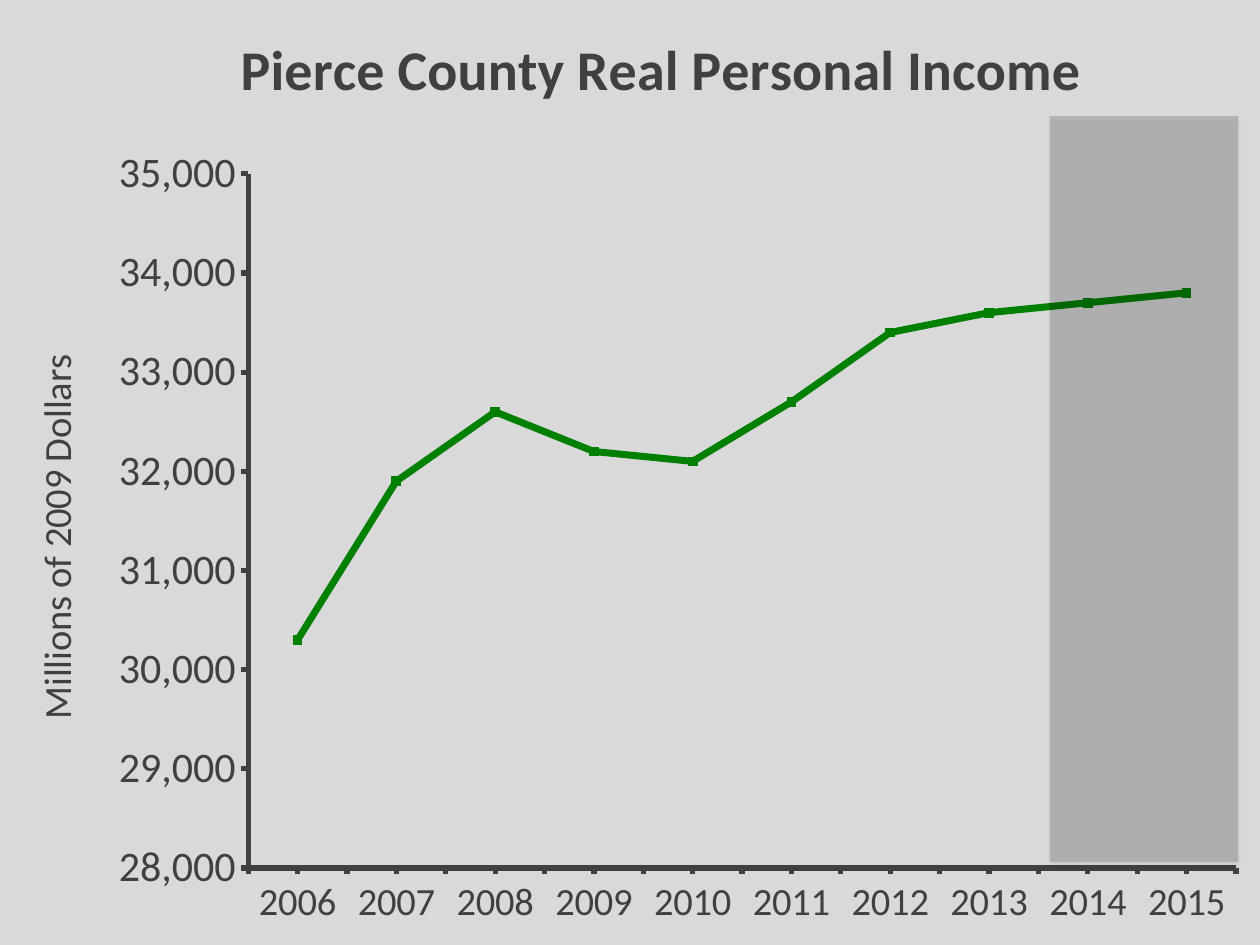
from dataclasses import dataclass

from lxml import etree
from pptx import Presentation
from pptx.chart.data import CategoryChartData
from pptx.dml.color import RGBColor
from pptx.enum.chart import XL_CHART_TYPE, XL_MARKER_STYLE, XL_TICK_MARK
from pptx.enum.shapes import MSO_SHAPE
from pptx.oxml import parse_xml
from pptx.oxml.ns import nsdecls, qn
from pptx.util import Inches, Pt

LINE_MARKERS = XL_CHART_TYPE.LINE_MARKERS
SQUARE = XL_MARKER_STYLE.SQUARE
NO_TICK = XL_TICK_MARK.NONE
OUTSIDE = XL_TICK_MARK.OUTSIDE
RECTANGLE = MSO_SHAPE.RECTANGLE


@dataclass(frozen=True)
class Theme:
    font: str = "Calibri"
    ink: str = "404040"
    paper: str = "D9D9D9"
    income: str = "008000"
    forecast: str = "0D0D0D"
    shadow: str = "000000"
    title_size: int = 32
    value_size: int = 24
    label_size: int = 22
    base_size: int = 10


THEME = Theme()


def style_font(font, size, bold=False):
    font.name = THEME.font
    font.size = Pt(size)
    font.bold = bold
    font.color.rgb = RGBColor.from_string(THEME.ink)


def place(element, index, target, **lengths):
    for old in element.findall(qn("c:layout")):
        element.remove(old)
    layout = etree.Element(qn("c:layout"))
    manual = etree.SubElement(layout, qn("c:manualLayout"))
    if target:
        etree.SubElement(manual, qn("c:layoutTarget"), val=target)
    for mode in ("xMode", "yMode"):
        etree.SubElement(manual, qn(f"c:{mode}"), val="edge")
    for name, length in lengths.items():
        whole = deck.slide_width if name in "xw" else deck.slide_height
        etree.SubElement(manual, qn(f"c:{name}"), val=str(Inches(length) / whole))
    element.insert(index, layout)


deck = Presentation()
deck.slide_width = Inches(10)
deck.slide_height = Inches(7.5)
page = deck.slides.add_slide(deck.slide_layouts[6])

income = CategoryChartData(number_format="#,##0")
income.categories = [str(year) for year in range(2006, 2016)]
income.add_series(
    "Real Personal Income",
    [30300, 31900, 32600, 32200, 32100, 32700, 33400, 33600, 33700, 33800],
)
chart = page.shapes.add_chart(
    LINE_MARKERS, 0, 0, deck.slide_width, deck.slide_height, income
).chart
chart.has_legend = False
style_font(chart.font, THEME.base_size)

chart.has_title = True
value_axis = chart.value_axis
value_axis.has_title = True
for title, text, size, bold in (
    (chart.chart_title, "Pierce County Real Personal Income", THEME.title_size, True),
    (value_axis.axis_title, "Millions of 2009 Dollars", THEME.label_size, False),
):
    span = title.text_frame.paragraphs[0].add_run()
    span.text = text
    style_font(span.font, size, bold)

value_title = value_axis.axis_title._element
body = value_title.find(".//" + qn("a:bodyPr"))
body.set("rot", "-5400000")
body.set("vert", "horz")

value_axis.minimum_scale = 28000
value_axis.maximum_scale = 35000
value_axis.major_unit = 1000
value_axis.has_major_gridlines = False
value_axis.tick_labels.number_format = "#,##0"
value_axis.tick_labels.number_format_is_linked = False
for axis, size, major, minor in (
    (value_axis, THEME.value_size, OUTSIDE, NO_TICK),
    (chart.category_axis, THEME.label_size, NO_TICK, OUTSIDE),
):
    axis.major_tick_mark = major
    axis.minor_tick_mark = minor
    axis.format.line.width = Pt(3)
    axis.format.line.color.rgb = RGBColor.from_string(THEME.ink)
    style_font(axis.tick_labels.font, size)

plot = chart.plots[0]
plot.vary_by_categories = False
series = plot.series[0]
series.smooth = False
series.marker.style = SQUARE
series.marker.size = 5
series.marker.format.fill.solid()
series.marker.format.fill.fore_color.rgb = RGBColor.from_string(THEME.income)
for line, width in ((series.format.line, 4), (series.marker.format.line, 0.75)):
    line.width = Pt(width)
    line.color.rgb = RGBColor.from_string(THEME.income)

chart_space = chart._chartSpace
plot_area = chart_space.find(".//" + qn("c:plotArea"))
place(plot_area, 0, "inner", x=1.97, y=1.38, w=7.84, h=5.51)
place(chart.chart_title._element, 1, None, x=1.83, y=0.16)
place(value_title, 1, None, x=0.18, y=2.76)

paper_fill = (
    f'<c:spPr {nsdecls("c", "a")}><a:solidFill><a:srgbClr val="{THEME.paper}"/>'
    "</a:solidFill><a:ln><a:noFill/></a:ln></c:spPr>"
)
plot_area.append(parse_xml(paper_fill))
chart_space.find(qn("c:chart")).addnext(parse_xml(paper_fill))

band = page.shapes.add_shape(
    RECTANGLE, Inches(8.33), Inches(0.92), Inches(1.5), Inches(5.92)
)
band.line.fill.background()
band.fill.solid()
band.fill.fore_color.rgb = RGBColor.from_string(THEME.forecast)
band_color = band._element.spPr.find(qn("a:solidFill")).find(qn("a:srgbClr"))
etree.SubElement(band_color, qn("a:alpha"), val="16000")
band.shadow.inherit = False
effects = band._element.spPr.find(qn("a:effectLst"))
shadow = etree.SubElement(
    effects,
    qn("a:outerShdw"),
    blurRad=str(Pt(3.1)),
    dist=str(Pt(1.8)),
    dir="5400000",
    rotWithShape="0",
)
shadow_color = etree.SubElement(shadow, qn("a:srgbClr"), val=THEME.shadow)
etree.SubElement(shadow_color, qn("a:alpha"), val="35000")

deck.save("out.pptx")
